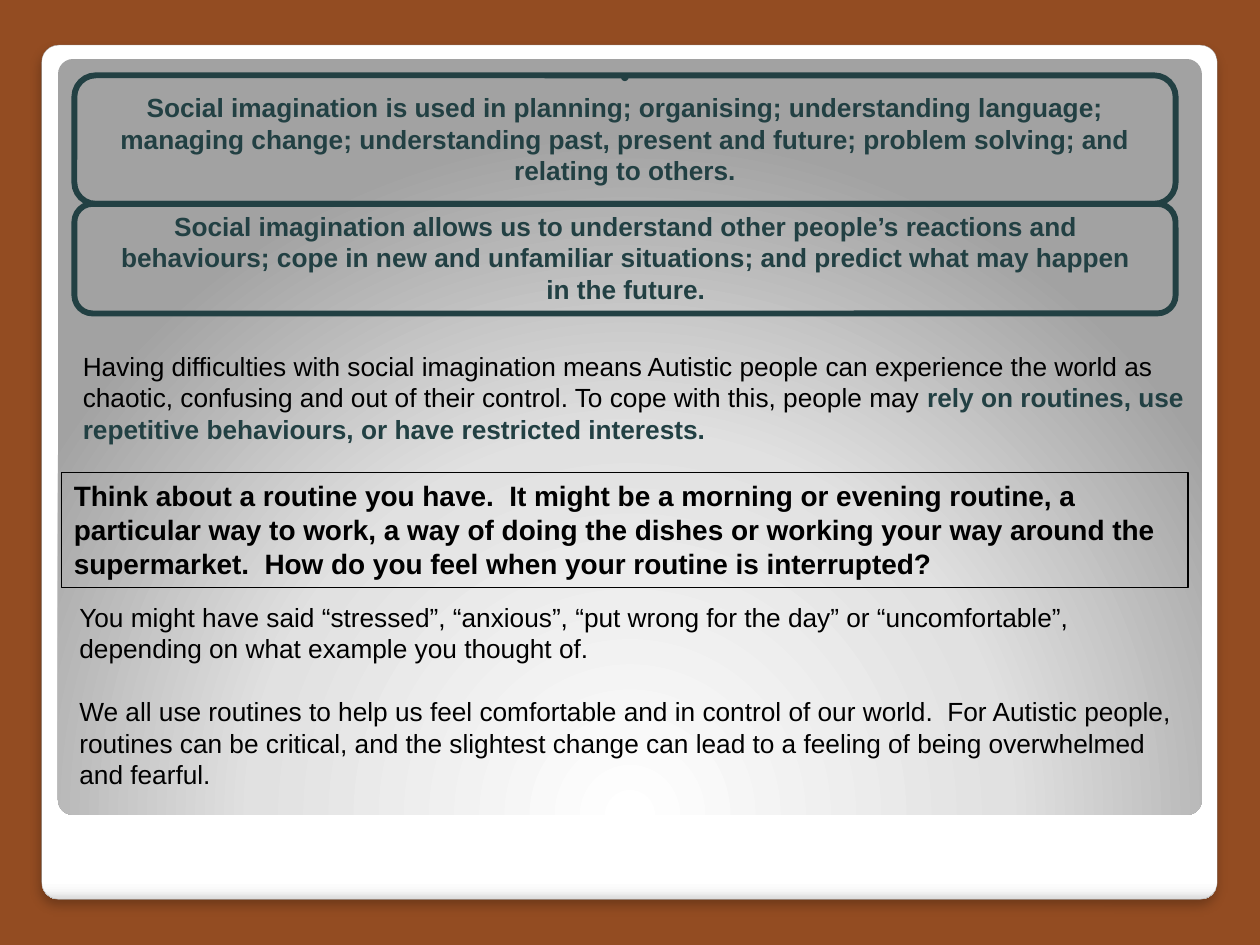
import pptx
import pptx.util
import pptx.dml.color
import pptx.enum.shapes
import pptx.enum.text
import pptx.oxml
import pptx.oxml.ns

Cm, Pt = pptx.util.Cm, pptx.util.Pt
RGB = pptx.dml.color.RGBColor
ALIGN = pptx.enum.text.PP_ALIGN
ANCHOR = pptx.enum.text.MSO_ANCHOR
KIND = pptx.enum.shapes.MSO_SHAPE

RUST = RGB(0x93, 0x4C, 0x22)
TEAL = RGB(0x22, 0x40, 0x43)
BLACK = RGB(0, 0, 0)
EDGE = RGB(0xA4, 0xA4, 0xA4)
CARD = [(0, "FFFFFF"), (98, "FFFFFF"), (99, "F7F7F7"), (100, "DADADA")]
PANEL = [(0, "FFFFFF"), (55, "E1E1E1"), (100, "A2A2A2")]
DOWN = '<a:lin ang="5400000" scaled="0"/>'
ROUND = ('<a:path path="circle"><a:fillToRect l="50000" t="175000" '
         'r="50000" b="-75000"/></a:path>')
SHADE = ('<a:effectLst {ns}><a:outerShdw blurRad="76200" dist="50800" dir="5400000" '
         'algn="ctr" rotWithShape="0"><a:srgbClr val="000000">'
         '<a:alpha val="25000"/></a:srgbClr></a:outerShdw></a:effectLst>')

# Outlined frames: box in cm
FRAMES = [(1.5, 1.52, 22.2, 2.59), (1.5, 4.11, 22.2, 2.21)]

# Texts: box in cm, size, look, paragraphs of (text, colour, bold) runs
TEXTS = [
    ((1.45, 1.19, 22.3, 2.59), 15, "title", [
        [("•", TEAL, True)],
        [("Social imagination is used in planning; organising; understanding language; "
          "managing change; understanding past, present and future; problem solving; "
          "and relating to others.", TEAL, True)]]),
    ((1.42, 6.93, 22.81, 2.18), 15, "plain", [
        [("Having difficulties with social imagination means Autistic people can "
          "experience the world as chaotic, confusing and out of their control. "
          "To cope with this, people may ", BLACK, False),
         ("rely on routines, use repetitive behaviours, or have restricted interests.",
          TEAL, True)]]),
    ((1.24, 9.53, 22.71, 2.31), 16, "boxed", [
        [("Think about a routine you have.  It might be a morning or evening routine, "
          "a particular way to work, a way of doing the dishes or working your way "
          "around the supermarket.  How do you feel when your routine is interrupted?",
          BLACK, True)]]),
    ((1.35, 11.99, 22.71, 4.11), 15, "plain", [
        [("You might have said “stressed”, “anxious”, “put wrong for the day” or "
          "“uncomfortable”, depending on what example you thought of.", BLACK, False)],
        [("We all use routines to help us feel comfortable and in control of our world.  "
          "For Autistic people, routines can be critical, and the slightest change can "
          "lead to a feeling of being overwhelmed and fearful.", BLACK, False)]]),
    ((2.01, 4.11, 21.21, 2.18), 15, "centre", [
        [("Social imagination allows us to understand other people’s reactions and "
          "behaviours; cope in new and unfamiliar situations; and predict what may "
          "happen in the future.", TEAL, True)]]),
]


def add_round(slide, box, adj=None):
    shape = slide.shapes.add_shape(KIND.ROUNDED_RECTANGLE, *map(Cm, box))
    shape.shadow.inherit = False
    shape.fill.background()
    shape.line.fill.background()
    if adj is not None:
        shape.adjustments[0] = adj
    return shape


def set_grad(shape, stops, way):
    marks = "".join(f'<a:gs pos="{pos * 1000}"><a:srgbClr val="{tint}"/></a:gs>'
                    for pos, tint in stops)
    grad = pptx.oxml.parse_xml(
        f'<a:gradFill {pptx.oxml.ns.nsdecls("a")} rotWithShape="1">'
        f'<a:gsLst>{marks}</a:gsLst>{way}</a:gradFill>')
    props = shape.element.spPr
    props.replace(props.find(pptx.oxml.ns.qn("a:noFill")), grad)


def add_text(slide, box, size, look, paras):
    shape = slide.shapes.add_textbox(*map(Cm, box))
    frame = shape.text_frame
    frame.word_wrap = True
    if look == "title":
        frame.vertical_anchor = ANCHOR.MIDDLE
    if look == "boxed":
        shape.line.color.rgb = BLACK
        shape.line.width = Pt(0.75)
    for num, runs in enumerate(paras):
        para = frame.add_paragraph() if num else frame.paragraphs[0]
        para.line_spacing = Pt(size * 1.2)
        para.alignment = ALIGN.CENTER if look in ("title", "centre") else ALIGN.LEFT
        if num and look == "plain":
            para.space_before = Pt(size * 1.2)
        for words, tint, bold in runs:
            run = para.add_run()
            run.text = words
            run.font.name = "Arial"
            run.font.size = Pt(size)
            run.font.bold = bold
            run.font.color.rgb = tint


def main():
    deck = pptx.Presentation()
    deck.slide_width, deck.slide_height = Cm(25.4), Cm(19.05)
    slide = deck.slides.add_slide(deck.slide_layouts[6])
    slide.background.fill.solid()
    slide.background.fill.fore_color.rgb = RUST

    # White card with a soft shadow, grey panel on top
    card = add_round(slide, (0.84, 0.91, 23.7, 17.22), 0.02)
    set_grad(card, CARD, DOWN)
    card.line.color.rgb = EDGE
    card.line.width = Pt(0.16)
    props = card.element.spPr
    props.replace(props.find(pptx.oxml.ns.qn("a:effectLst")),
                  pptx.oxml.parse_xml(SHADE.format(ns=pptx.oxml.ns.nsdecls("a"))))
    panel = add_round(slide, (1.17, 1.19, 23.06, 15.24), 0.02)
    set_grad(panel, PANEL, ROUND)

    # Frames and texts
    for box in FRAMES:
        frame = add_round(slide, box)
        frame.line.color.rgb = TEAL
        frame.line.width = Pt(3.35)
    for item in TEXTS:
        add_text(slide, *item)

    deck.save("out.pptx")


if __name__ == "__main__":
    main()
